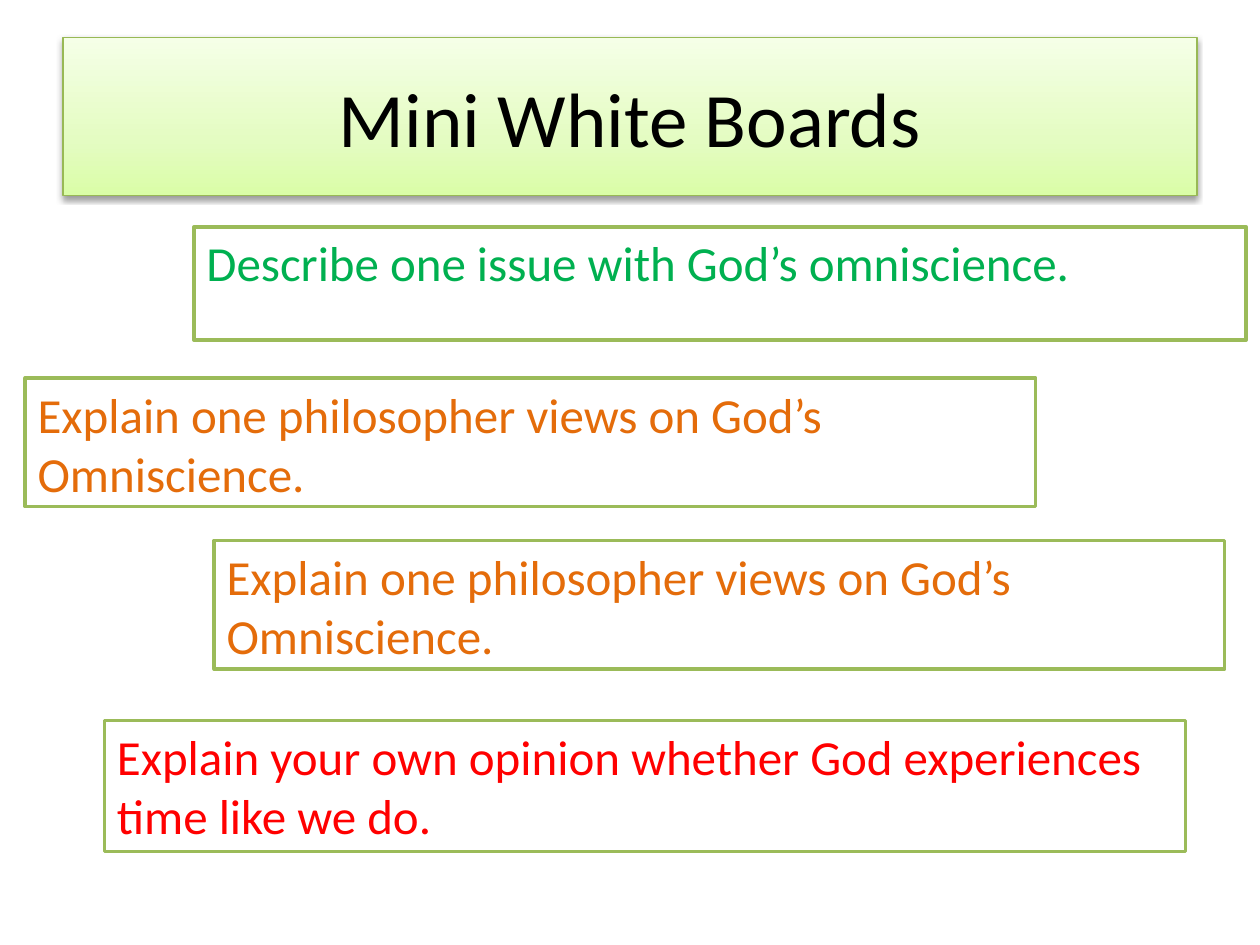
from copy import deepcopy
from lxml.etree import SubElement
from pptx import Presentation
from pptx.dml.color import RGBColor
from pptx.enum.shapes import MSO_SHAPE
from pptx.enum.text import MSO_ANCHOR, PP_ALIGN
from pptx.oxml.ns import qn
from pptx.util import Inches, Pt

COLUMNS, ROWS = 100, 75

deck = Presentation()
deck.slide_width, deck.slide_height = Inches(10), Inches(7.5)
column, row = deck.slide_width / COLUMNS, deck.slide_height / ROWS
slide = deck.slides.add_slide(deck.slide_layouts[6])


def rgb(value):
    return RGBColor.from_string(value)


def add_board(left, top, width, height, words, size, ink, edge, weight, align, anchor):
    board = slide.shapes.add_shape(
        MSO_SHAPE.RECTANGLE,
        round(left * column), round(top * row), round(width * column), round(height * row),
    )
    board.fill.solid()
    board.fill.fore_color.rgb = rgb("FFFFFF")
    board.line.color.rgb = rgb(edge)
    board.line.width = Pt(weight)
    board.shadow.inherit = False
    board.text_frame.word_wrap = True
    board.text_frame.vertical_anchor = anchor
    paragraph = board.text_frame.paragraphs[0]
    paragraph.text = words
    paragraph.alignment = align
    paragraph.font.name = "Calibri"
    paragraph.font.size = Pt(size)
    paragraph.font.color.rgb = rgb(ink)
    return board


title = add_board(5, 3, 90, 12.5, "Mini White Boards", 44, "000000",
                  "98B955", 0.75, PP_ALIGN.CENTER, MSO_ANCHOR.MIDDLE)
title.fill.gradient()
title.fill.gradient_angle = 90
stop_list = title._element.spPr.find(qn("a:gradFill")).find(qn("a:gsLst"))
stop_list.insert(1, deepcopy(stop_list[0]))
greens = [(0, "DAFDA7"), (0.35, "E4FCC2"), (1, "F5FFE7")]
for stop, (position, green) in zip(title.fill.gradient_stops, greens):
    stop.position = position
    stop.color.rgb = rgb(green)

effects = title._element.spPr.find(qn("a:effectLst"))
shadow = SubElement(effects, qn("a:outerShdw"), blurRad=str(Pt(3.1)), dist=str(Pt(1.6)),
                    dir="5400000", rotWithShape="0")
shadow_color = SubElement(shadow, qn("a:srgbClr"), val="000000")
SubElement(shadow_color, qn("a:alpha"), val="38000")

philosopher = "Explain one philosopher views on God’s Omniscience."
opinion = "Explain your own opinion whether God experiences time like we do."
questions = [
    (15.4, 18, 83.5, 9, "Describe one issue with God’s omniscience.", "00B050"),
    (2, 30, 80.2, 10.2, philosopher, "E46C0A"),
    (17, 42.9, 80.2, 10.2, philosopher, "E46C0A"),
    (8.3, 57.2, 85.8, 10.4, opinion, "FF0000"),
]
for left, top, width, height, words, ink in questions:
    add_board(left, top, width, height, words, 28, ink,
              "9BBB59", 2, PP_ALIGN.LEFT, MSO_ANCHOR.TOP)

deck.save("out.pptx")
